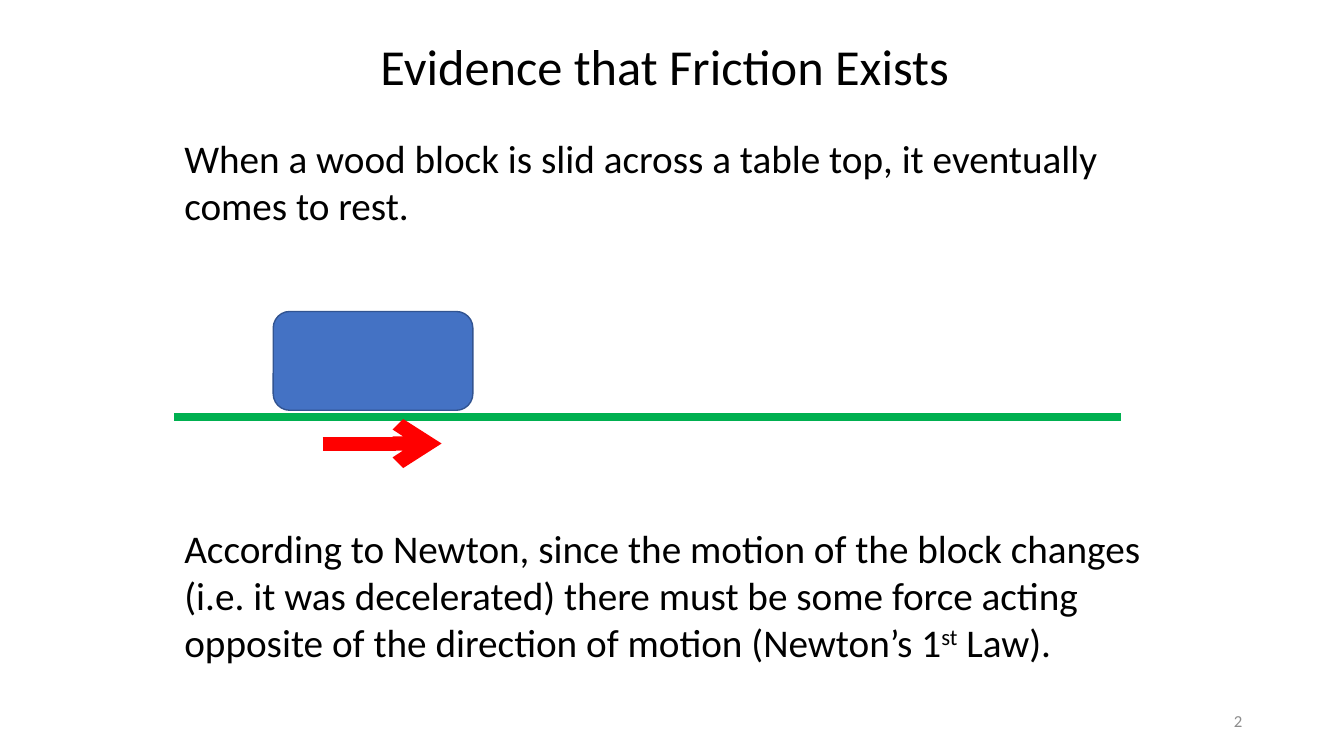
from lxml import etree
from pptx import Presentation
from pptx.dml.color import RGBColor
from pptx.enum.shapes import MSO_CONNECTOR, MSO_SHAPE
from pptx.enum.text import MSO_ANCHOR, PP_ALIGN
from pptx.oxml.ns import qn
from pptx.util import Emu, Pt

PX = 9144  # 100 px to the inch
BLACK = RGBColor(0x00, 0x00, 0x00)
GRAY = RGBColor(0x8C, 0x8C, 0x8C)
GREEN = RGBColor(0x00, 0xB0, 0x50)
RED = RGBColor(0xFF, 0x00, 0x00)
BLUE = RGBColor(0x44, 0x72, 0xC4)
DARK_BLUE = RGBColor(0x32, 0x54, 0x91)
LEFT, CENTER, RIGHT = PP_ALIGN.LEFT, PP_ALIGN.CENTER, PP_ALIGN.RIGHT
TOP, MIDDLE = MSO_ANCHOR.TOP, MSO_ANCHOR.MIDDLE
STRAIGHT, ROUNDED = MSO_CONNECTOR.STRAIGHT, MSO_SHAPE.ROUNDED_RECTANGLE


def px(*lengths):
    return [Emu(n * PX) for n in lengths]


prs = Presentation()
prs.slide_width, prs.slide_height = px(1333, 750)
s = prs.slides.add_slide(prs.slide_layouts[6])

# Texts: box, runs as (text, superscript), size, colour, alignment, anchor
texts = [
    ((271, 30, 777, 71), [("Evidence that Friction Exists", False)],
     36, BLACK, CENTER, TOP),
    ((173, 128, 986, 104),
     [("When a wood block is slid across a table top, it eventually "
       "comes to rest.", False)], 28, BLACK, LEFT, TOP),
    ((173, 515, 1008, 151),
     [("According to Newton, since the motion of the block changes "
       "(i.e. it was decelerated) there must be some force acting "
       "opposite of the direction of motion (Newton’s 1", False),
      ("st", True), (" Law).", False)], 28, BLACK, LEFT, TOP),
    ((942, 695, 300, 40), [("2", False)], 12, GRAY, RIGHT, MIDDLE),
]
for box, runs, size, color, align, anchor in texts:
    tf = s.shapes.add_textbox(*px(*box)).text_frame
    tf.word_wrap = True
    tf.vertical_anchor = anchor
    p = tf.paragraphs[0]
    p.alignment = align
    for text, superscript in runs:
        r = p.add_run()
        r.text = text
        for name, value in {"name": "Calibri", "size": Pt(size)}.items():
            setattr(r.font, name, value)
        r.font.color.rgb = color
        if superscript:
            r._r.get_or_add_rPr().set("baseline", "30000")

# Wood block
block = s.shapes.add_shape(ROUNDED, *px(271, 309, 198, 98))
block.shadow.inherit = False
block.fill.solid()
block.fill.fore_color.rgb = BLUE
block.line.color.rgb = DARK_BLUE
block.line.width = Pt(1)

# Table top and motion arrow
for ends, color, width, arrow in [
    ((173, 414, 1112, 414), GREEN, 6, False),
    ((320, 440, 438, 440), RED, 10, True),
]:
    c = s.shapes.add_connector(STRAIGHT, *px(*ends))
    c.line.color.rgb = color
    c.line.width = Pt(width)
    if arrow:
        etree.SubElement(c.line._get_or_add_ln(), qn("a:tailEnd"), type="arrow")
    etree.SubElement(c._element.spPr, qn("a:effectLst"))

prs.save("out.pptx")
